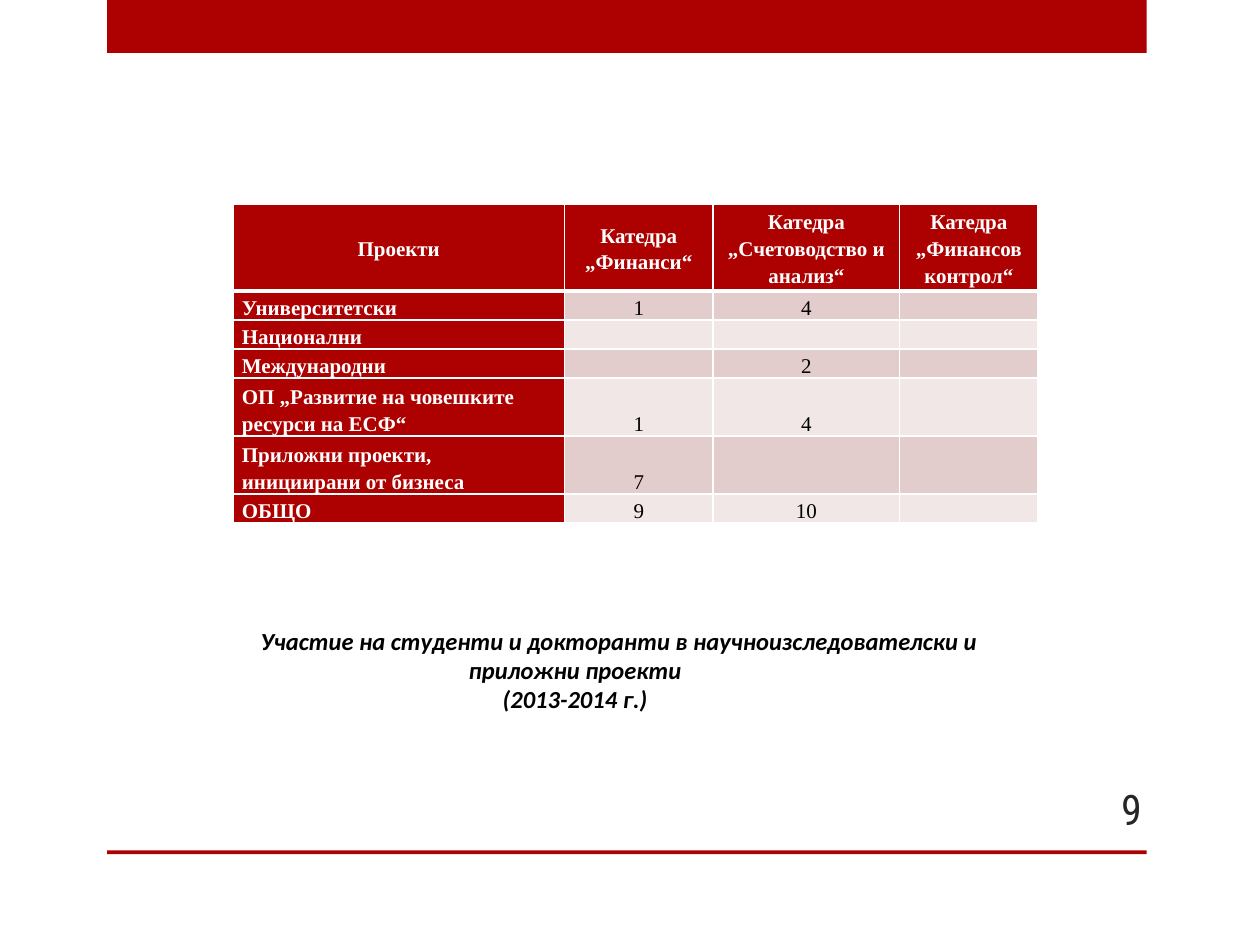
"""Build the slide on student participation in research projects."""
from lxml import etree
from pptx import Presentation
from pptx.dml.color import RGBColor
from pptx.enum import shapes, text
from pptx.oxml import ns
from pptx.util import Inches, Pt

RED = RGBColor(0xAD, 0x01, 0x01)
WHITE = RGBColor(0xFF, 0xFF, 0xFF)
BLACK = RGBColor(0, 0, 0)
GREY = RGBColor(0x26, 0x26, 0x26)
ROSE = RGBColor(0xE3, 0xCC, 0xCC)
PALE = RGBColor(0xF1, 0xE7, 0xE7)
MID, LOW = text.MSO_ANCHOR.MIDDLE, text.MSO_ANCHOR.BOTTOM
LEFT, CENTER, RIGHT = text.PP_ALIGN.LEFT, text.PP_ALIGN.CENTER, text.PP_ALIGN.RIGHT


def add_run(para, words, face, size, color, bold=False):
    run = para.add_run()
    run.text = words
    run.font.name = face
    run.font.size = Pt(size)
    run.font.color.rgb = color
    run.font.bold = bold
    return run


def add_edge(cell, side, width):
    line = etree.SubElement(cell._tc.get_or_add_tcPr(), ns.qn("a:ln" + side), w=str(Pt(width)))
    fill = etree.SubElement(line, ns.qn("a:solidFill"))
    etree.SubElement(fill, ns.qn("a:srgbClr"), val=str(WHITE))


deck = Presentation()
deck.slide_width, deck.slide_height = Inches(10), Inches(7.5)
slide = deck.slides.add_slide(deck.slide_layouts[6])

for top, height in ((0, 0.42), (6.75, 0.03)):
    bar = slide.shapes.add_shape(
        shapes.MSO_SHAPE.RECTANGLE, Inches(0.85), Inches(top), Inches(8.25), Inches(height))
    bar.shadow.inherit = False
    bar.fill.solid()
    bar.fill.fore_color.rgb = RED
    bar.line.fill.background()

number = slide.shapes.add_textbox(Inches(8.33), Inches(6.22), Inches(0.83), Inches(0.4))
number.text_frame.word_wrap = True
number.text_frame.vertical_anchor = MID
para = number.text_frame.paragraphs[0]
para.alignment = RIGHT
add_run(para, "9", "Roboto Condensed", 24, GREY)

rows = [
    ["Проекти", "Катедра „Финанси“", "Катедра „Счетоводство и анализ“", "Катедра „Финансов контрол“"],
    ["Университетски", "1", "4", ""],
    ["Национални", "", "", ""],
    ["Международни", "", "2", ""],
    ["ОП „Развитие на човешките ресурси на ЕСФ“", "1", "4", ""],
    ["Приложни проекти,\nинициирани от бизнеса", "7", "", ""],
    ["ОБЩО", "9", "10", ""],
]
widths = [2.63, 1.18, 1.48, 1.1]
heights = [0.69, 0.23, 0.23, 0.23, 0.46, 0.46, 0.23]
table = slide.shapes.add_table(
    len(rows), len(widths), Inches(1.85), Inches(1.62), Inches(6.39), Inches(2.53)).table
for col, width in zip(table.columns, widths):
    col.width = Inches(width)
for row, height in zip(table.rows, heights):
    row.height = Inches(height)

for i, row in enumerate(rows):
    for j, words in enumerate(row):
        cell = table.cell(i, j)
        label = i == 0 or j == 0
        cell.margin_left = cell.margin_right = Inches(0.07)
        cell.margin_top = cell.margin_bottom = 0
        cell.vertical_anchor = MID if i == 0 else LOW
        for side in "LRTB":
            thick = (i, side) in ((0, "B"), (1, "T"))
            add_edge(cell, side, 3 if thick else 1)
        cell.fill.solid()
        cell.fill.fore_color.rgb = RED if label else ROSE if i % 2 else PALE
        frame = cell.text_frame
        for k, part in enumerate(words.split("\n")):
            para = frame.add_paragraph() if k else frame.paragraphs[0]
            para.alignment = LEFT if i and j == 0 else CENTER
            para.line_spacing = 1.15
            if part:
                add_run(para, part, "Times New Roman", 12, WHITE if label else BLACK, label)
            else:
                etree.SubElement(para._p, ns.qn("a:endParaRPr"), sz="1200")

title = slide.shapes.add_textbox(Inches(0.83), Inches(4.76), Inches(7.47), Inches(1.11))
frame = title.text_frame
frame.word_wrap = True
frame.vertical_anchor = MID
lines = ["Участие на студенти и докторанти в научноизследователски и",
         "приложни проекти", "(2013-2014 г.)"]
for k, words in enumerate(lines):
    para = frame.add_paragraph() if k else frame.paragraphs[0]
    para.alignment = CENTER
    if k == 0:
        para._p.get_or_add_pPr().set("marL", str(Inches(0.7)))
    add_run(para, words, "Calibri", 14, BLACK, True).font.italic = True

deck.save("out.pptx")
